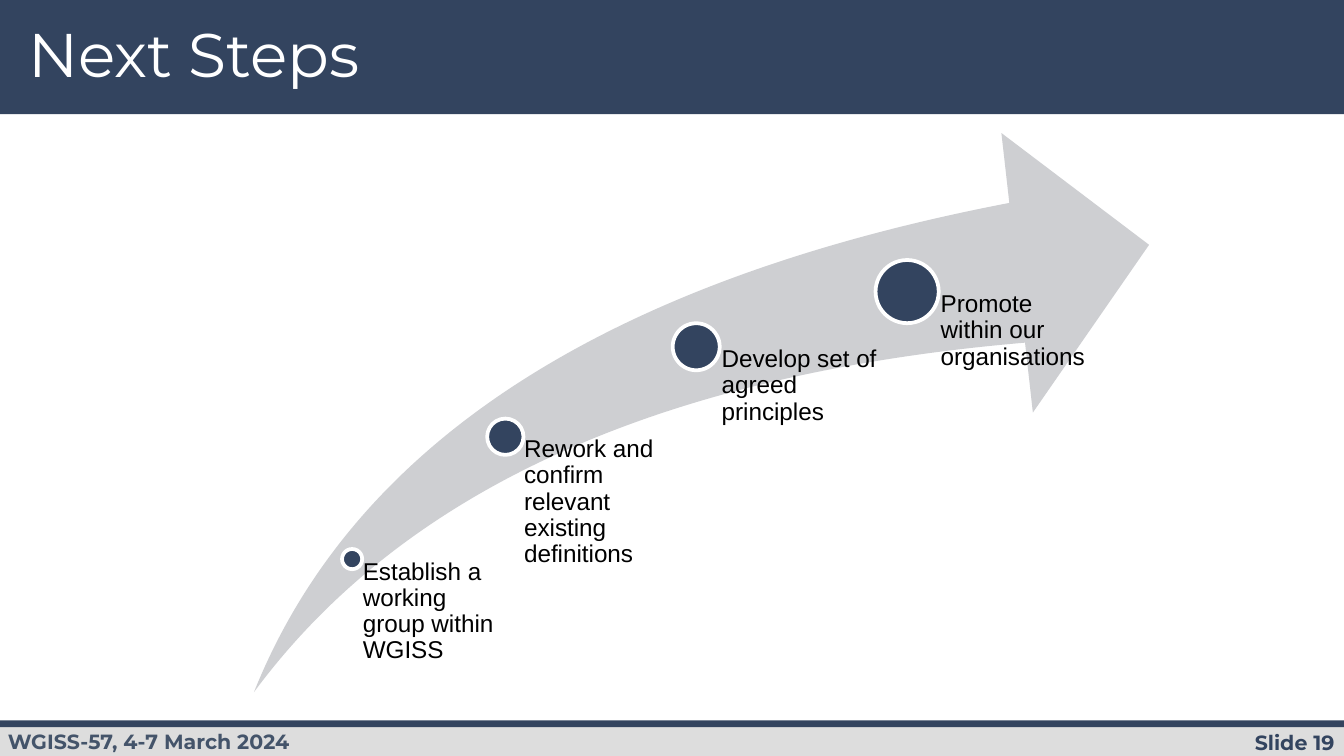
import pptx
import pptx.dml.color
import pptx.enum.shapes
import pptx.enum.text
import pptx.util

SHAPE = pptx.enum.shapes.MSO_SHAPE
ALIGN = pptx.enum.text.PP_ALIGN
CELL = 0.1  # inches per grid column and row
COLUMNS, ROWS = 100, 56.25


def color(hex_string):
    return pptx.dml.color.RGBColor.from_string(hex_string)


def grid(cells):
    return pptx.util.Inches(cells * CELL)


class SlideBuilder:
    """Draws on one slide; all lengths are grid columns and rows."""
    navy, slate, white, black = "33445F", "44546A", "FFFFFF", "000000"
    footer_gray, arrow_gray = "DDDDDD", "CECFD2"
    heading_font, body_font = "Montserrat", "Arial"

    def __init__(self, deck):
        self.slide = deck.slides.add_slide(deck.slide_layouts[6])

    def shape(self, kind, left, top, width, height, fill, line=None):
        shape = self.slide.shapes.add_shape(
            kind, grid(left), grid(top), grid(width), grid(height))
        shape.shadow.inherit = False
        shape.fill.solid()
        shape.fill.fore_color.rgb = color(fill)
        if line:
            shape.line.color.rgb = color(line)
            shape.line.width = pptx.util.Pt(2)
        else:
            shape.line.fill.background()
        return shape

    def band(self, top, height, fill):
        return self.shape(SHAPE.RECTANGLE, 0, top, COLUMNS, height, fill)

    def text(self, text, left, top, width, height, *, size, hue, font,
             bold=False, align=ALIGN.LEFT, spacing=1.0, insets=(0.7, 0.4, 0.7, 0.4)):
        """Insets run left, top, right, bottom."""
        box = self.slide.shapes.add_textbox(
            grid(left), grid(top), grid(width), grid(height))
        frame = box.text_frame
        frame.word_wrap = True
        frame.vertical_anchor = pptx.enum.text.MSO_ANCHOR.TOP
        (frame.margin_left, frame.margin_top,
         frame.margin_right, frame.margin_bottom) = map(grid, insets)
        para = frame.paragraphs[0]
        para.alignment = align
        para.line_spacing = spacing
        span = para.add_run()
        span.text = text
        span.font.name = font
        span.font.size = pptx.util.Pt(size)
        span.font.bold = bold
        span.font.color.rgb = color(hue)

    def milestone(self, label, center_x, center_y, diameter, width, inset, bottom):
        """A dot whose label box starts at the dot's centre."""
        radius = diameter / 2
        self.shape(SHAPE.OVAL, center_x - radius, center_y - radius,
                   diameter, diameter, self.navy, self.white)
        self.text(label, center_x, center_y, width, bottom - center_y,
                  size=13, hue=self.black, font=self.body_font,
                  spacing=0.9, insets=(inset, 0, 0, 0))


def main():
    deck = pptx.Presentation()
    deck.slide_width, deck.slide_height = grid(COLUMNS), grid(ROWS)
    page = SlideBuilder(deck)

    page.band(0, 8.5, page.navy)
    page.band(53.9, ROWS - 53.9, page.footer_gray)
    page.band(53.6, 0.5, page.navy)

    footer = {"size": 11, "font": page.heading_font, "bold": True}
    page.text("Slide 19", 84.2, 53.9, 15.8, 2.6,
              hue=page.navy, align=ALIGN.RIGHT, **footer)
    page.text("WGISS-57, 4-7 March 2024", -0.4, 53.3, 31.6, 3.9,
              hue=page.slate, insets=(1, 1, 1, 1), **footer)
    page.text("Next Steps", 1.4, 1.4, 77, 6.4, size=33, hue=page.white,
              font=page.heading_font, spacing=0.9)

    arrow_top, arrow_height = 9.9, 41.6
    arrow = page.shape(SHAPE.SWOOSH_ARROW, 18.9, arrow_top, 66.6, arrow_height,
                       page.arrow_gray)
    arrow.adjustments[0] = arrow.adjustments[1] = 0.25

    milestones = [
        ("Establish a working group within WGISS", 26.2, 41.6, 1.5, 11.4, 0.8),
        ("Rework and confirm relevant existing definitions", 37.6, 32.5, 2.7, 14, 1.4),
        ("Develop set of agreed principles", 51.8, 25.8, 3.5, 14, 1.9),
        ("Promote within our organisations", 67.5, 21.7, 4.7, 14, 2.5),
    ]
    for milestone in milestones:
        page.milestone(*milestone, bottom=arrow_top + arrow_height)

    deck.save("out.pptx")


if __name__ == "__main__":
    main()
